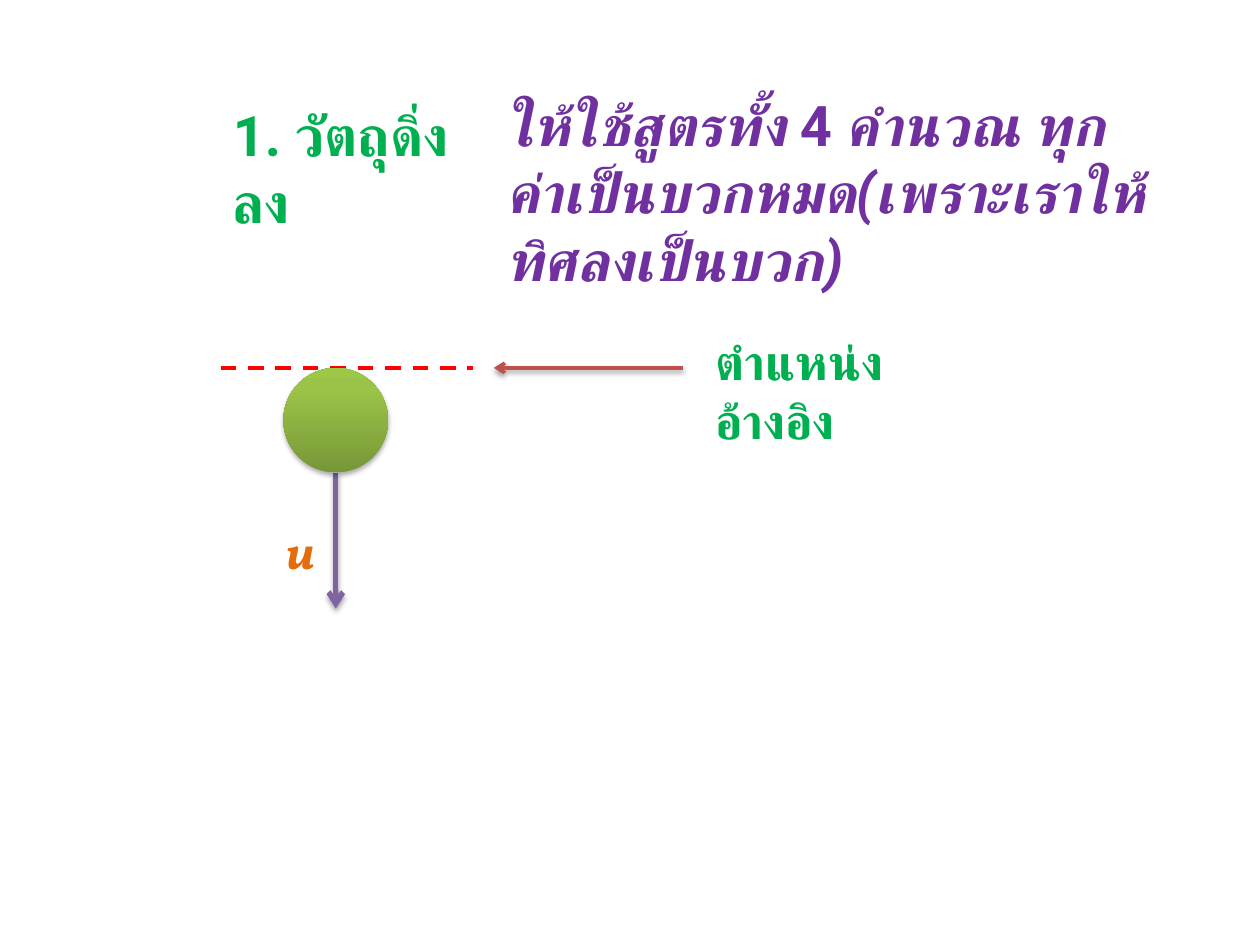
from lxml import etree
from pptx import Presentation
from pptx.dml.color import RGBColor
from pptx.enum.dml import MSO_LINE
from pptx.enum.lang import MSO_LANGUAGE_ID
from pptx.enum.shapes import MSO_CONNECTOR, MSO_SHAPE
from pptx.oxml.ns import qn
from pptx.util import Inches, Pt

STRAIGHT = MSO_CONNECTOR.STRAIGHT
OVAL = MSO_SHAPE.OVAL
DASH = MSO_LINE.DASH
THAI = MSO_LANGUAGE_ID.THAI

REFERENCE_Y = 2.92
BALL_LEFT, BALL_SIZE = 2.25, 0.83
BALL_CENTER = BALL_LEFT + BALL_SIZE / 2
BALL_BOTTOM = REFERENCE_Y + BALL_SIZE
BALL_GRADIENT = [(0, "779737"), (80, "9BC348"), (100, "9DC746")]

HEADING = [("1. วัตถุดิ่งลง", False)]
RULE = [
    ("ให้ใช้สูตรทั้ง ", True),
    ("4 ", False),
    ("คำนวณ ทุกค่าเป็นบวกหมด(เพราะเราให้ทิศลงเป็นบวก)", True),
]
TEXTS = [
    (HEADING, (1.75, 0.75, 1.93, 0.64), 32, "Roboto", "00B050"),
    (RULE, (3.92, 0.67, 5.33, 1.18), 32, "Roboto", "7030A0"),
    ([("u", True)], (2.17, 4.08, 0.5, 0.57), 28, "Vollkorn", "E46C0A"),
    ([("ตำแหน่งอ้างอิง", False)], (5.58, 2.58, 2.08, 0.57), 28, "Roboto", "00B050"),
]


def color(value):
    return RGBColor.from_string(value)


def add_element(parent, tag, **attributes):
    return etree.SubElement(parent, qn(tag), attributes)


def add_effects(shape, opacity=None, distance=0):
    effects = add_element(shape._element.spPr, "a:effectLst")
    if opacity is None:
        return
    shadow = add_element(effects, "a:outerShdw", blurRad=str(Pt(3.1)),
                         dist=str(Pt(distance)), dir="5400000", rotWithShape="0")
    shade = add_element(shadow, "a:srgbClr", val="000000")
    add_element(shade, "a:alpha", val=str(opacity * 1000))


def add_line(slide, start, end, line_color, width, dash=None, arrow=False,
             opacity=None, distance=0):
    connector = slide.shapes.add_connector(
        STRAIGHT, *(Inches(value) for value in (*start, *end)))
    connector.line.color.rgb = color(line_color)
    connector.line.width = Pt(width)
    if dash:
        connector.line.dash_style = dash
    if arrow:
        add_element(connector.line._get_or_add_ln(), "a:tailEnd", type="arrow")
    add_effects(connector, opacity, distance)


def add_text(slide, runs, box, size, font_name, font_color):
    shape = slide.shapes.add_textbox(*(Inches(value) for value in box))
    shape.text_frame.word_wrap = True
    paragraph = shape.text_frame.paragraphs[0]
    for text, italic in runs:
        run = paragraph.add_run()
        run.text = text
        font = run.font
        font.size = Pt(size)
        font.name = font_name
        font.bold = True
        font.italic = italic
        font.language_id = THAI
        font.color.rgb = color(font_color)
        add_element(run._r.get_or_add_rPr(), "a:cs", typeface=font_name)


def add_ball(slide):
    ball = slide.shapes.add_shape(OVAL, Inches(BALL_LEFT), Inches(REFERENCE_Y),
                                  Inches(BALL_SIZE), Inches(BALL_SIZE))
    ball.line.fill.background()
    gradient = etree.Element(qn("a:gradFill"), rotWithShape="1")
    stops = add_element(gradient, "a:gsLst")
    for position, value in BALL_GRADIENT:
        stop = add_element(stops, "a:gs", pos=str(position * 1000))
        add_element(stop, "a:srgbClr", val=value)
    add_element(gradient, "a:lin", ang=str(270 * 60000), scaled="0")
    ball._element.spPr.find(qn("a:prstGeom")).addnext(gradient)
    add_effects(ball, 35, 1.8)


def main():
    presentation = Presentation()
    presentation.slide_width = Inches(10)
    presentation.slide_height = Inches(7.5)
    slide = presentation.slides.add_slide(presentation.slide_layouts[6])
    heading, rule, velocity, reference = TEXTS

    add_text(slide, *heading)
    add_text(slide, *rule)
    add_line(slide, (1.75, REFERENCE_Y), (3.75, REFERENCE_Y), "FF0000", 2.25, dash=DASH)
    add_line(slide, (BALL_CENTER, BALL_BOTTOM), (BALL_CENTER, 4.83), "8064A2", 3,
             arrow=True, opacity=35, distance=1.8)
    add_text(slide, *velocity)
    add_ball(slide)
    add_text(slide, *reference)
    add_line(slide, (5.42, REFERENCE_Y), (3.92, REFERENCE_Y), "C0504D", 2,
             arrow=True, opacity=38, distance=1.6)

    presentation.save("out.pptx")


if __name__ == "__main__":
    main()
